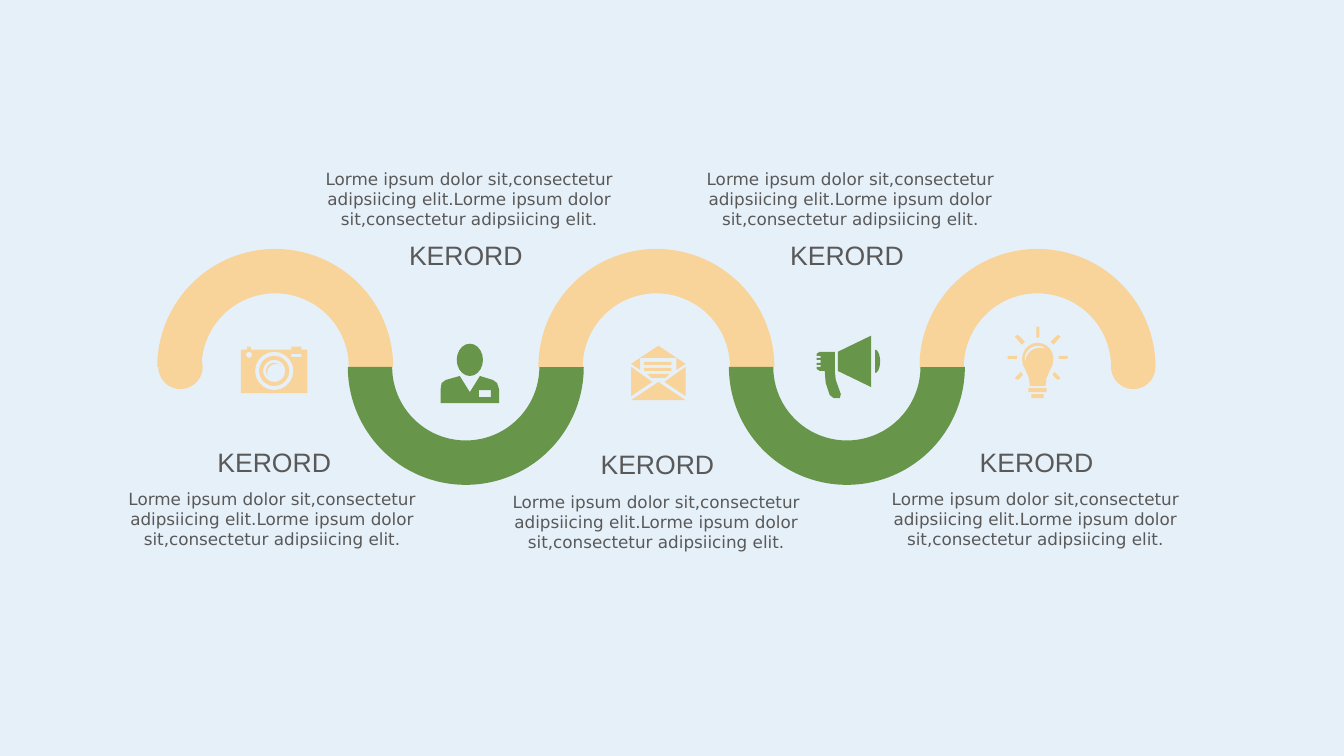
from math import cos, radians, sin

from pptx import Presentation
from pptx.dml.color import RGBColor
from pptx.enum.shapes import MSO_SHAPE as Preset
from pptx.enum.text import MSO_AUTO_SIZE as AutoSize, PP_ALIGN as Align
from pptx.util import Pt

PX = 9144  # 100 px to the inch
SAND, GREEN, GREY, SKY = "F8D49B", "679549", "595959", "E6F0F9"
KEYWORD = "KERORD"
BODY = "Lorme ipsum dolor sit,consectetur adipsiicing elit." * 2


def color(value):
    return RGBColor.from_string(value)


def arc(x, y, rx, ry, start, end):
    """Points along an elliptical arc, clockwise from the right, in degrees."""
    steps = max(5, abs(end - start) // 18)
    angles = [radians(start + (end - start) * i / steps) for i in range(steps + 1)]
    return [(x + rx * cos(a), y + ry * sin(a)) for a in angles]


def circle(x, y, radius):
    return arc(x, y, radius, radius, 0, 360)


def box(left, top, right, bottom):
    return [(left, top), (right, top), (right, bottom), (left, bottom)]


def mirrored(points, axis):
    return [(2 * axis - x, y) for x, y in points]


class SlideBuilder:
    def __init__(self, presentation):
        self.slide = presentation.slides.add_slide(presentation.slide_layouts[6])
        background = self.slide.background.fill
        background.solid()
        background.fore_color.rgb = color(SKY)

    def paint(self, shape, fill):
        shape.shadow.inherit = False
        shape.fill.solid()
        shape.fill.fore_color.rgb = color(fill)
        shape.line.fill.background()

    def round_shape(self, preset, x, y, radius, fill):
        shape = self.slide.shapes.add_shape(
            preset, (x - radius) * PX, (y - radius) * PX, 2 * radius * PX, 2 * radius * PX)
        self.paint(shape, fill)
        return shape

    def half_ring(self, x, y, radius, thickness, upper, fill):
        ring = self.round_shape(Preset.BLOCK_ARC, x, y, radius, fill)
        half_turn = 108  # 180 degrees in adjustment units
        ring.adjustments[0] = half_turn if upper else 0
        ring.adjustments[1] = 0 if upper else half_turn
        ring.adjustments[2] = thickness / (2 * radius)

    def outline(self, contours, fill):
        """One filled shape; nested contours cut holes."""
        scaled = [[(round(x * PX), round(y * PX)) for x, y in contour] for contour in contours]
        builder = self.slide.shapes.build_freeform(*scaled[0][0], scale=1.0)
        for number, contour in enumerate(scaled):
            if number:
                builder.move_to(*contour[0])
            builder.add_line_segments(contour[1:], close=True)
        self.paint(builder.convert_to_shape(), fill)

    def text(self, left, top, width, height, words, size, font):
        shape = self.slide.shapes.add_textbox(*(n * PX for n in (left, top, width, height)))
        frame = shape.text_frame
        frame.word_wrap = True
        frame.auto_size = AutoSize.SHAPE_TO_FIT_TEXT
        paragraph = frame.paragraphs[0]
        paragraph.alignment = Align.CENTER
        run = paragraph.add_run()
        run.text = words
        run.font.size = Pt(size)
        run.font.name = font
        run.font.color.rgb = color(GREY)


def camera():
    body = [(239, 347), (245, 347), (245, 344), (249, 344), (249, 347), (289, 347),
            (289, 344), (299, 344), (299, 347), (305, 347), (305, 390), (239, 390)]
    rings = [circle(272, 368, radius) for radius in (19, 15, 11)]
    glint = arc(272, 368, 8, 8, 140, 320) + arc(273.5, 369.5, 8.5, 8.5, 310, 150)
    return [body, circle(247, 352, 3), box(289, 351, 299, 354), *rings, glint]


def person():
    body = [(437, 400), (437, 386), (438, 380), (442, 377), (456, 373), (466, 389),
            (476, 373), (489, 377), (493, 380), (495, 386), (495, 400)]
    return [body, arc(466, 357, 13, 16, 0, 360), box(475, 387, 487, 394)]


def envelope():
    flap = [(653, 343), (680, 361), (671, 367), (671, 355), (635, 355), (635, 367), (626, 361)]
    side = [(680, 364), (680, 393), (659, 379)]
    bottom = [(680, 397), (626, 397), (653, 379)]
    last_line = [(660, 375), (646, 375), (642, 371), (664, 371)]
    return [box(639, 359, 666, 362), box(639, 365, 666, 368), flap,
            side, mirrored(side, 653), bottom, last_line]


def megaphone():
    handle = [(828, 349), (813, 349), (810, 351), (810, 353), (814, 353), (814, 355),
              (810, 355), (810, 357), (814, 357), (814, 360), (810, 360), (810, 362),
              (814, 362), (814, 364), (810, 364), (810, 366), (813, 368), (818, 368),
              (819, 380), (823, 392), (827, 395), (833, 395), (834, 391), (829, 377), (828, 368)]
    horn = [(864, 333), (864, 384), (831, 368), (831, 349)]
    return [arc(868, 358.5, 5, 11.5, -90, 90), handle, horn]


def bulb():
    axis = 1029.25
    taper = [(1044, 362), (1041, 368), (1038, 375), (1037, 383)]
    glass = arc(axis, 356, 15.5, 16, 180, 360) + taper + mirrored(taper[::-1], axis)
    glint = arc(axis, 356, 13, 13, 160, 310) + arc(1031, 359, 14, 14, 285, 185)
    rays = [[(1049, 332), (1052, 334), (1045, 342), (1042, 339)],
            [(1044, 372), (1049, 377), (1052, 375), (1046, 369)],
            box(1050, 353, 1059, 356)]
    return [glass, glint, box(1020, 385, 1038, 389), box(1023, 391, 1035, 395),
            box(1028, 324, 1031, 335), *rays, *(mirrored(ray, axis) for ray in rays)]


def main():
    presentation = Presentation()
    presentation.slide_width = 1333 * PX
    presentation.slide_height = 750 * PX
    builder = SlideBuilder(presentation)

    # Wave of half rings, with a round cap at either end
    icons = [camera, person, envelope, megaphone, bulb]
    fills = [GREEN if index % 2 else SAND for index in range(len(icons))]
    for index, fill in enumerate(fills):
        builder.half_ring(273 + 189 * index, 364, 117, 44, index % 2 == 0, fill)
    for cap_x in (179, 1124):
        builder.round_shape(Preset.OVAL, cap_x, 364, 22, SAND)

    # Icons inside the bends
    for icon, fill in zip(icons, fills):
        builder.outline(icon(), fill)

    # Captions: keyword left and top, then body left, top and width
    captions = [(181, 437, 112, 480, 316), (371, 232, 305, 162, 321),
                (561, 439, 493, 483, 316), (749, 232, 683, 162, 321),
                (937, 437, 869, 480, 316)]
    for key_left, key_top, body_left, body_top, body_width in captions:
        builder.text(key_left, key_top, 182, 42, KEYWORD, 19, "Arial")
        builder.text(body_left, body_top, body_width, 70, BODY, 12, "DejaVu Sans")

    presentation.save("out.pptx")


if __name__ == "__main__":
    main()
